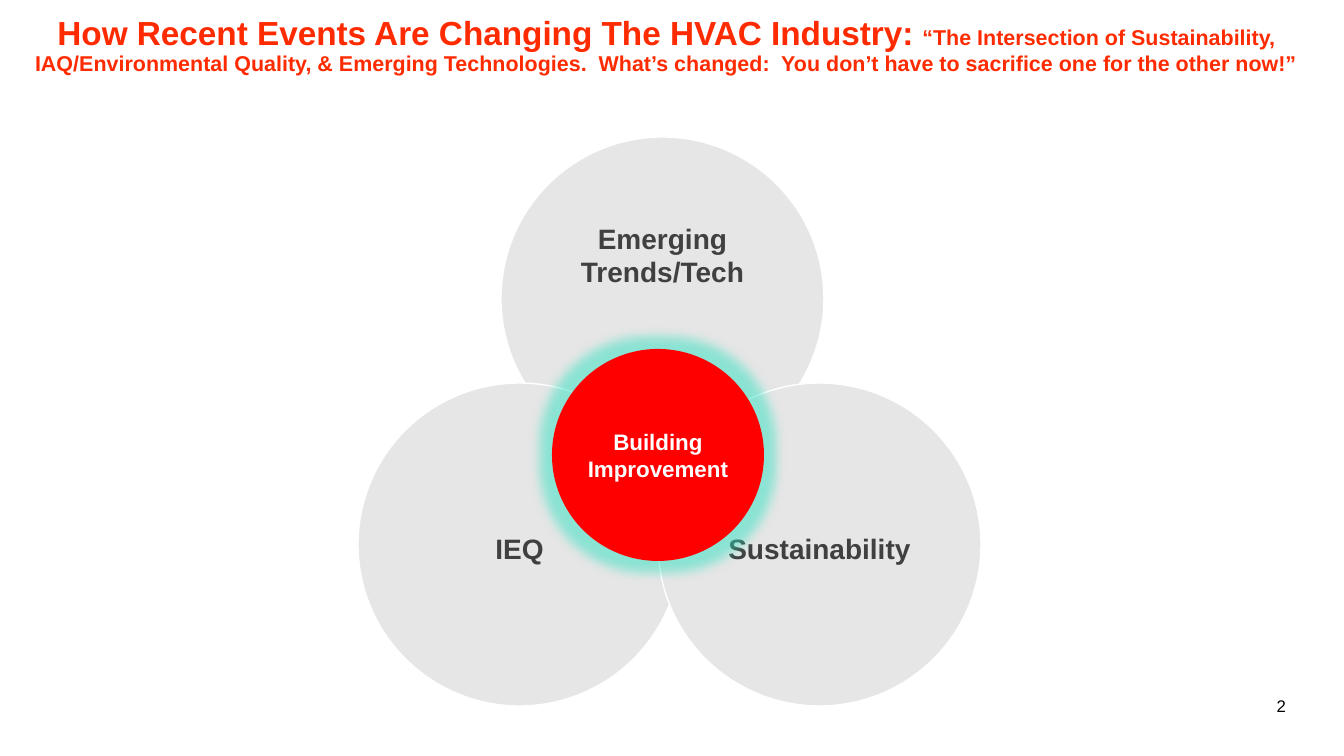
from lxml.etree import SubElement
from pptx import Presentation
from pptx.dml.color import RGBColor
from pptx.enum.shapes import MSO_SHAPE
from pptx.enum.text import MSO_ANCHOR, MSO_AUTO_SIZE, PP_ALIGN
from pptx.oxml.ns import qn
from pptx.util import Pt

# Content
TITLE_SPANS = [
    ("How Recent Events Are Changing The HVAC Industry: ", 23.8),
    ("“The Intersection of Sustainability, IAQ/Environmental Quality, & Emerging "
     "Technologies.  What’s changed:  You don’t have to sacrifice one for the other now!”", 15.3),
]
# Label, left, top, space above the label
VENN_CIRCLES = [
    ("Emerging Trends/Tech", 501, 137, 37),
    ("IEQ", 358, 383, 101),
    ("Sustainability", 658, 383, 101),
]
CENTRE = ("Building Improvement", 552, 349)
PAGE_NUMBER = "2"

COLOURS = {"title": "FF2B00", "circle": "E7E6E6", "outline": "FFFFFF", "label": "404040",
           "centre": "FF0000", "centre_label": "FFFFFF", "glow": "2EE0C0", "number": "000000"}
FONT = "Arial"
VENN_SIZE, CENTRE_SIZE, GLOW_RADIUS = 323, 212, 23


def px(length):
    return int(length * 914400 / 100.8)


def colour(name):
    return RGBColor.from_string(COLOURS[name])


def set_font(font, size, name, bold=True):
    font.name, font.size, font.bold = FONT, Pt(size), bold
    font.color.rgb = colour(name)


def add_circle(page, text, left, top, size, fill, label, points):
    circle = page.shapes.add_shape(MSO_SHAPE.OVAL, px(left), px(top), px(size), px(size))
    circle.shadow.inherit = False
    circle.fill.solid()
    circle.fill.fore_color.rgb = colour(fill)
    frame = circle.text_frame
    frame.word_wrap = True
    frame.margin_left = frame.margin_right = frame.margin_top = frame.margin_bottom = 0
    para = frame.paragraphs[0]
    para.text, para.alignment = text, PP_ALIGN.CENTER
    set_font(para.font, points, label)
    return circle


deck = Presentation()
deck.slide_width, deck.slide_height = px(1344), px(756)
page = deck.slides.add_slide(deck.slide_layouts[5])

# Title
title = page.shapes.title
title.left, title.top, title.width, title.height = px(11), px(12), px(1311), px(78)
frame = title.text_frame
frame.word_wrap, frame.auto_size = True, MSO_AUTO_SIZE.NONE
frame.vertical_anchor = MSO_ANCHOR.TOP
para = frame.paragraphs[0]
para.alignment, para.line_spacing = PP_ALIGN.CENTER, 0.9
for text, points in TITLE_SPANS:
    span = para.add_run()
    span.text = text
    set_font(span.font, points, "title")

# Three overlapping circles
for text, left, top, space_above in VENN_CIRCLES:
    circle = add_circle(page, text, left, top, VENN_SIZE, "circle", "label", 20)
    circle.line.color.rgb = colour("outline")
    circle.line.width = Pt(1)
    circle.text_frame.vertical_anchor = MSO_ANCHOR.TOP
    circle.text_frame.margin_top = px(space_above)

# Glowing centre
centre = add_circle(page, *CENTRE, CENTRE_SIZE, "centre", "centre_label", 16)
centre.line.fill.background()
centre.text_frame.vertical_anchor = MSO_ANCHOR.MIDDLE
effects = centre.element.spPr.find(qn("a:effectLst"))
glow = SubElement(effects, qn("a:glow"), rad=str(px(GLOW_RADIUS)))
glow_colour = SubElement(glow, qn("a:srgbClr"), val=COLOURS["glow"])
SubElement(glow_colour, qn("a:alpha"), val="50000")

# Page number
number = page.shapes.add_textbox(px(994), px(686), px(302), px(40))
number.text_frame.word_wrap = True
number.text_frame.vertical_anchor = MSO_ANCHOR.MIDDLE
para = number.text_frame.paragraphs[0]
para.text, para.alignment = PAGE_NUMBER, PP_ALIGN.RIGHT
set_font(para.font, 12, "number", bold=False)

deck.save("out.pptx")
